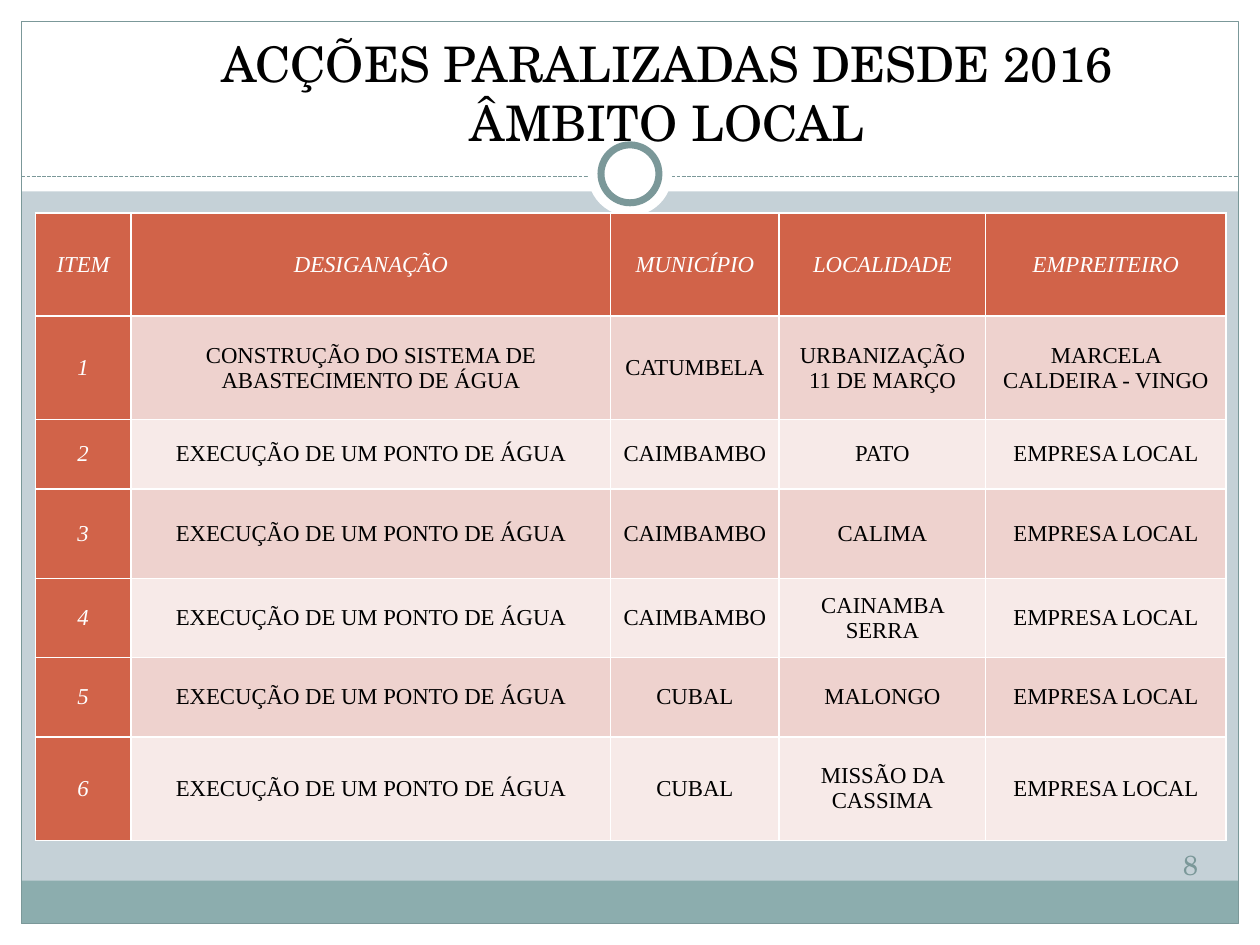
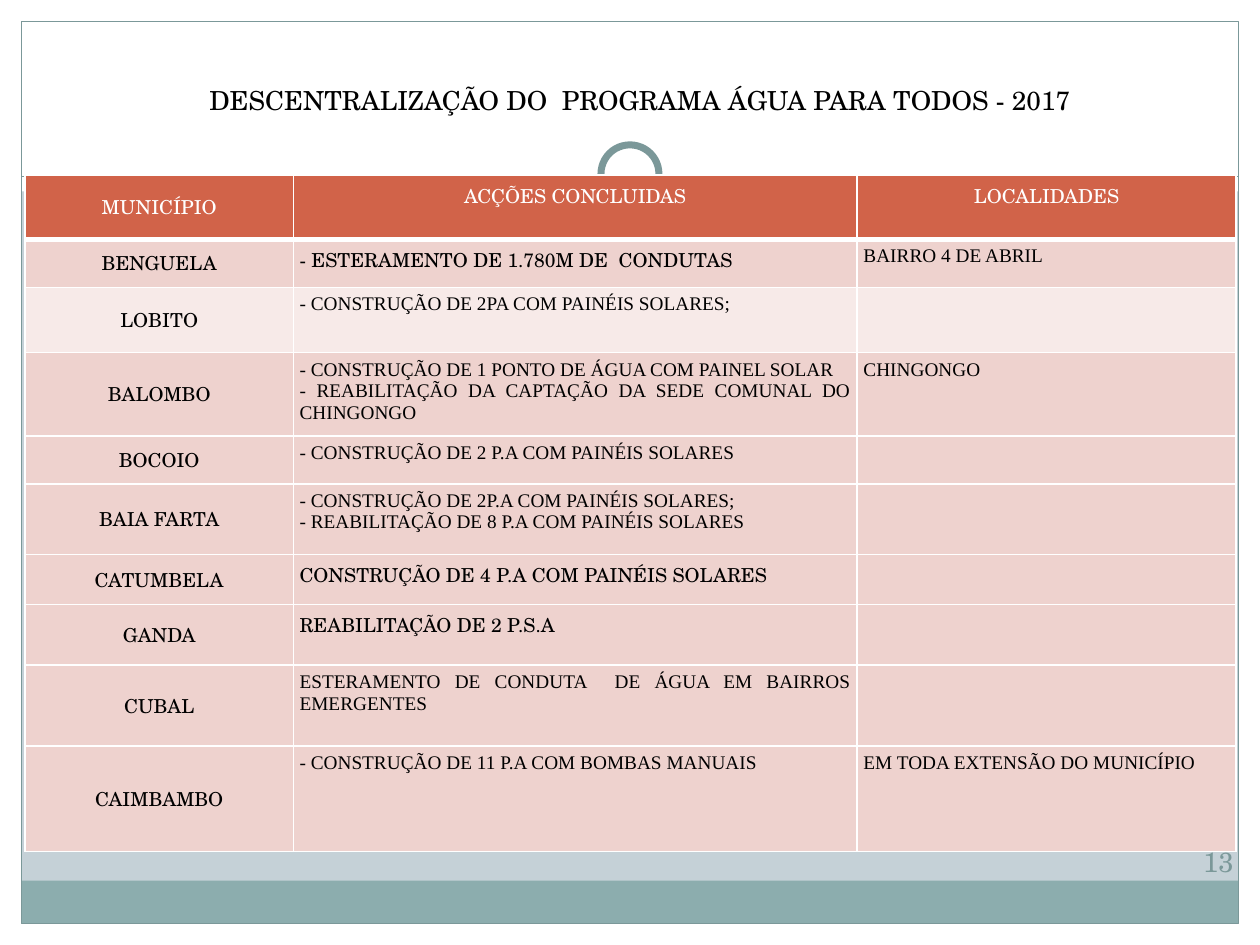
from collections import namedtuple

from lxml import etree
from pptx import Presentation
from pptx.dml.color import RGBColor
from pptx.enum.dml import MSO_LINE
from pptx.enum.shapes import MSO_CONNECTOR, MSO_SHAPE
from pptx.enum.text import MSO_ANCHOR, PP_ALIGN
from pptx.oxml.ns import qn
from pptx.util import Inches, Pt

RECT, OVAL, STRAIGHT = MSO_SHAPE.RECTANGLE, MSO_SHAPE.OVAL, MSO_CONNECTOR.STRAIGHT
DASH = MSO_LINE.SQUARE_DOT
TOP, MIDDLE, BOTTOM = MSO_ANCHOR.TOP, MSO_ANCHOR.MIDDLE, MSO_ANCHOR.BOTTOM
LEFT, CENTER, JUSTIFY = PP_ALIGN.LEFT, PP_ALIGN.CENTER, PP_ALIGN.JUSTIFY

WHITE = RGBColor(0xFF, 0xFF, 0xFF)
BLACK = RGBColor(0x00, 0x00, 0x00)
BACKDROP = RGBColor(0xC5, 0xD1, 0xD7)
TEAL = RGBColor(0x8C, 0xAD, 0xAE)
SLATE = RGBColor(0x7B, 0x98, 0x99)
RUST = RGBColor(0xD1, 0x63, 0x49)
ROSE = RGBColor(0xEE, 0xD2, 0xCE)
BLUSH = RGBColor(0xF7, 0xEA, 0xE8)

SCHOLA, TIMES = "TeX Gyre Schola", "Times New Roman"
CELL = Inches(0.1)
Box = namedtuple("Box", "left top width height")
Style = namedtuple("Style", "size font color italic", defaults=(False,))
PAGE = Box(0, 0, 100, 75)
MARGIN = 1.7

WORKS_HEADER = ["ITEM", "DESIGANAÇÃO", "MUNICÍPIO", "LOCALIDADE", "EMPREITEIRO"]
WATER_POINT = "EXECUÇÃO DE UM PONTO DE ÁGUA"
BUILDER = "EMPRESA LOCAL"
WORKS = [
    ["CONSTRUÇÃO DO SISTEMA DE ABASTECIMENTO DE ÁGUA", "CATUMBELA",
     "URBANIZAÇÃO 11 DE MARÇO", "MARCELA CALDEIRA - VINGO"],
    [WATER_POINT, "CAIMBAMBO", "PATO", BUILDER],
    [WATER_POINT, "CAIMBAMBO", "CALIMA", BUILDER],
    [WATER_POINT, "CAIMBAMBO", "CAINAMBA SERRA", BUILDER],
    [WATER_POINT, "CUBAL", "MALONGO", BUILDER],
    [WATER_POINT, "CUBAL", "MISSÃO DA CASSIMA", BUILDER],
]

ACTIONS_HEADER = ["MUNICÍPIO", "ACÇÕES CONCLUIDAS", "LOCALIDADES"]
ACTIONS = [
    ["BENGUELA", "- ESTERAMENTO DE 1.780M DE  CONDUTAS", "BAIRRO 4 DE ABRIL"],
    ["LOBITO", "- CONSTRUÇÃO DE 2PA COM PAINÉIS SOLARES;", ""],
    ["BALOMBO", "- CONSTRUÇÃO DE 1 PONTO DE ÁGUA COM PAINEL SOLAR\n"
     "- REABILITAÇÃO DA CAPTAÇÃO DA SEDE COMUNAL DO CHINGONGO", "CHINGONGO"],
    ["BOCOIO", "- CONSTRUÇÃO DE 2 P.A COM PAINÉIS SOLARES", ""],
    ["BAIA FARTA", "- CONSTRUÇÃO DE 2P.A COM PAINÉIS SOLARES;\n"
     "- REABILITAÇÃO DE 8 P.A COM PAINÉIS SOLARES", ""],
    ["CATUMBELA", "CONSTRUÇÃO DE 4 P.A COM PAINÉIS SOLARES", ""],
    ["GANDA", "REABILITAÇÃO DE 2 P.S.A", ""],
    ["CUBAL", "ESTERAMENTO DE CONDUTA  DE ÁGUA EM BAIRROS EMERGENTES", ""],
    ["CAIMBAMBO", "- CONSTRUÇÃO DE 11 P.A COM BOMBAS MANUAIS",
     "EM TODA EXTENSÃO DO MUNICÍPIO"],
]
SCHOLA_ACTIONS = {"BENGUELA", "CATUMBELA", "GANDA"}


def grid(*cells):
    """Convert grid cells to slide lengths."""
    return [round(n * CELL) for n in cells]


def add_panel(s, box, fill=None, line=None, weight=0.75, kind=RECT):
    """Draw a flat shape with an optional fill and outline."""
    sp = s.shapes.add_shape(kind, *grid(*box))
    sp.shadow.inherit = False
    if fill is None:
        sp.fill.background()
    else:
        sp.fill.solid()
        sp.fill.fore_color.rgb = fill
    if line is None:
        sp.line.fill.background()
    else:
        sp.line.color.rgb = line
        sp.line.width = Pt(weight)


def add_rule(s, left, right, y):
    """Draw the dashed rule under the title."""
    rule = s.shapes.add_connector(STRAIGHT, *grid(left, y, right, y))
    rule.line.color.rgb = SLATE
    rule.line.width = Pt(0.75)
    rule.line.dash_style = DASH
    etree.SubElement(rule._element.spPr, qn("a:effectLst"))


def add_frame(s, box):
    """Draw the white margins, footer band, rule and ring of every slide."""
    left, top, width, height = box
    right, bottom = left + width, top + height
    inner = Box(left + MARGIN, top + MARGIN, width - 2 * MARGIN, height - 2 * MARGIN)
    inner_bottom = bottom - MARGIN
    for band in (Box(left, inner_bottom, width, MARGIN),
                 Box(left, top, width, 15.2),
                 Box(left, top, MARGIN, height),
                 Box(right - MARGIN, top, MARGIN, height)):
        add_panel(s, band, WHITE)
    add_panel(s, Box(inner.left, inner_bottom - 3.4, inner.width, 3.4), TEAL)
    add_panel(s, inner, line=SLATE)
    add_rule(s, inner.left, right - MARGIN, top + 14)
    for size, line in ((6.7, None), (4.6, SLATE)):
        ring = Box(left + (width - size) / 2, top + 13.8 - size / 2, size, size)
        add_panel(s, ring, WHITE, line, 4, OVAL)


def style_text(tf, style, align):
    """Format every paragraph, empty ones included."""
    for p in tf.paragraphs:
        p.alignment = align
        for r in p.runs:
            r.font.size, r.font.name = Pt(style.size), style.font
            r.font.color.rgb = style.color
            r.font.italic = style.italic
        if not p.runs:
            end = etree.SubElement(p._p, qn("a:endParaRPr"))
            end.set("sz", str(style.size * 100))


def set_insets(target, inset):
    """Give a cell or text frame equal margins."""
    target.margin_left = target.margin_right = inset
    target.margin_top = target.margin_bottom = inset


def add_text(s, box, text, style, anchor):
    """Place a centred text box without margins."""
    tf = s.shapes.add_textbox(*grid(*box)).text_frame
    tf.word_wrap = True
    tf.vertical_anchor = anchor
    set_insets(tf, 0)
    tf.text = text
    style_text(tf, style, CENTER)


def add_border(cell, side, weight):
    """Draw one white edge of a cell."""
    ln = etree.Element(qn("a:" + side), w=str(Pt(weight)))
    fill = etree.SubElement(ln, qn("a:solidFill"))
    etree.SubElement(fill, qn("a:srgbClr"), val=str(WHITE))
    return ln


def fill_cell(cell, text, fill, style, align, anchor, inset, edges):
    """Write and format one table cell."""
    cell.text = text
    cell.vertical_anchor = anchor
    set_insets(cell, Inches(inset))
    style_text(cell.text_frame, style, align)
    cell.fill.solid()
    cell.fill.fore_color.rgb = fill
    tc_pr = cell._tc.get_or_add_tcPr()
    for i, (side, weight) in enumerate(zip(("lnL", "lnR", "lnT", "lnB"), edges)):
        tc_pr.insert(i, add_border(cell, side, weight))


def add_grid_table(s, box, columns, rows, records, look, inset, header_edge=1):
    """Build a table whose cells take their looks from a rule."""
    table = s.shapes.add_table(len(rows), len(columns), *grid(*box)).table
    table.first_row = table.horz_banding = False
    for column, share in zip(table.columns, columns):
        column.width = round(box.width * CELL * share / sum(columns))
    for row, share in zip(table.rows, rows):
        row.height = round(box.height * CELL * share / sum(rows))
    for i, record in enumerate(records):
        edges = (1, 1, header_edge if i == 1 else 1, header_edge if i == 0 else 1)
        for j, text in enumerate(record):
            fill_cell(table.cell(i, j), text, *look(i, j, record), inset, edges)


def works_look(i, j, record):
    """Return the look of a cell in the stalled works table."""
    if i == 0 or j == 0:
        return RUST, Style(13, TIMES, WHITE, True), CENTER, MIDDLE
    return (ROSE if i % 2 else BLUSH), Style(13, TIMES, BLACK), CENTER, MIDDLE


def actions_look(i, j, record):
    """Return the look of a cell in the finished actions table."""
    anchor = TOP if j else MIDDLE
    if i == 0:
        return RUST, Style(11, SCHOLA, WHITE), CENTER, anchor
    schola = j == 0 or (j == 1 and record[0] in SCHOLA_ACTIONS)
    style = Style(11, SCHOLA if schola else TIMES, BLACK)
    return (BLUSH if i == 2 else ROSE), style, (CENTER, JUSTIFY, LEFT)[j], anchor


def add_page(prs, title, title_box, title_size, number, number_box):
    """Add a slide with its frame, title and number."""
    s = prs.slides.add_slide(prs.slide_layouts[6])
    s.background.fill.solid()
    s.background.fill.fore_color.rgb = BACKDROP
    add_frame(s, PAGE)
    add_text(s, title_box, title, Style(title_size, SCHOLA, BLACK), BOTTOM)
    add_text(s, number_box, str(number), Style(15.8, SCHOLA, SLATE), MIDDLE)
    return s


def add_works_slide(prs):
    """Build the slide of works stalled since 2016."""
    s = add_page(prs, "ACÇÕES PARALIZADAS DESDE 2016\vÂMBITO LOCAL",
                 Box(5.7, 1, 94.5, 11), 28, 8, Box(92, 66.8, 5, 3.6))
    records = [WORKS_HEADER] + [[str(n), *work] for n, work in enumerate(WORKS, 1)]
    add_grid_table(s, Box(2.8, 16.9, 94.5, 49.8), (7.6, 38.1, 13.4, 16.4, 19.1),
                   (8.2, 8.2, 5.5, 7.1, 6.3, 6.3, 8.2), records, works_look, 0.07)


def add_actions_slide(prs):
    """Build the slide of actions finished by municipality."""
    s = add_page(prs, "DESCENTRALIZAÇÃO DO  PROGRAMA ÁGUA PARA TODOS - 2017",
                 Box(7.5, 6, 86.6, 3.2), 15, 13, Box(94.2, 66.6, 5, 3.6))
    add_grid_table(s, Box(2, 13.9, 96.1, 53.7), (21.3, 44.8, 30.1),
                   (5.1, 3.8, 5.2, 6.6, 3.8, 5.6, 4, 4.8, 6.4, 8.4),
                   [ACTIONS_HEADER] + ACTIONS, actions_look, 0.05, 3)


def main():
    """Build and save the presentation."""
    prs = Presentation()
    prs.slide_width, prs.slide_height = grid(PAGE.width, PAGE.height)
    add_works_slide(prs)
    add_actions_slide(prs)
    prs.save("out.pptx")


if __name__ == "__main__":
    main()
